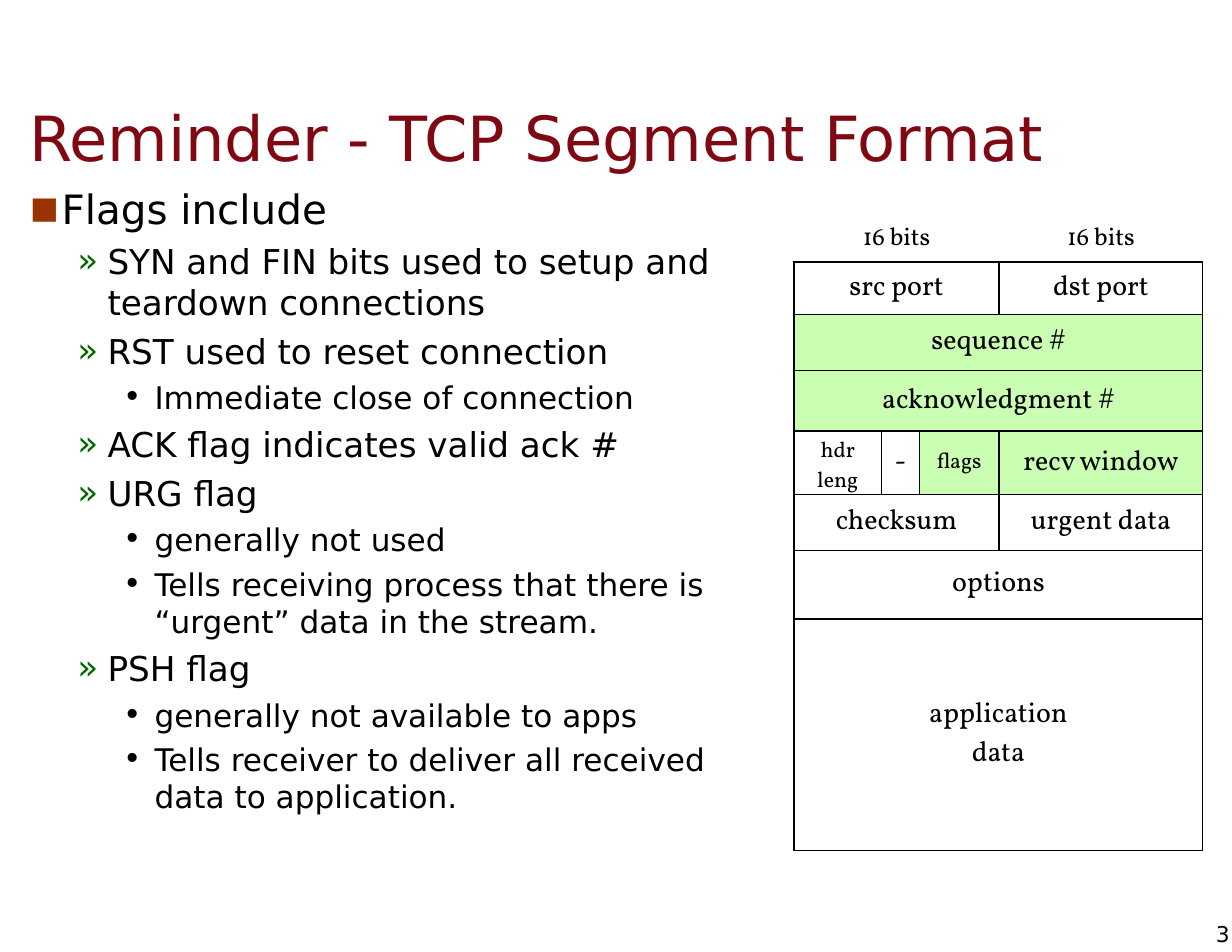
from dataclasses import dataclass
from lxml.etree import SubElement
from pptx import Presentation
from pptx.dml.color import RGBColor
from pptx.enum.text import MSO_ANCHOR, MSO_AUTO_SIZE, PP_ALIGN
from pptx.oxml.ns import qn
from pptx.slide import Slide
from pptx.util import Inches, Pt

BLACK = RGBColor(0x00, 0x00, 0x00)
WHITE = RGBColor(0xFF, 0xFF, 0xFF)
MAROON = RGBColor(0x7F, 0x08, 0x13)
RUST = RGBColor(0x99, 0x33, 0x00)
GREEN = RGBColor(0x00, 0x66, 0x00)
HIGHLIGHT = RGBColor(0xCA, 0xFE, 0xB2)

PLAIN_TABLE = "{2D5ABB26-0587-4C30-8999-92F81FD0307C}"
HEADER_SIDES = ("lnB",)
ALL_SIDES = ("lnL", "lnR", "lnT", "lnB")

LEVELS = (
    (26, 0.42, 0.28, "■", RUST, 75),
    (22, 0.83, 0.27, "»", GREEN, 100),
    (20, 1.25, 0.28, "•", BLACK, 100),
)

FLAG_NOTES = (
    (0, "Flags include"),
    (1, "SYN and FIN bits used to setup and \nteardown connections"),
    (1, "RST used to reset connection"),
    (2, "Immediate close of connection"),
    (1, "ACK flag indicates valid ack #"),
    (1, "URG flag"),
    (2, "generally not used"),
    (2, "Tells receiving process that there is “urgent” data in the stream."),
    (1, "PSH flag"),
    (2, "generally not available to apps"),
    (2, "Tells receiver to deliver all received data to application."),
)

FIELD_WIDTHS = (0.78, 0.34, 0.71, 1.82)
SEGMENT_ROWS = (
    (0.47, (("16 bits", 3, 16, None), ("16 bits", 1, 16, None))),
    (0.47, (("src port", 3, 18, WHITE), ("dst port", 1, 18, WHITE))),
    (0.5, (("sequence #", 4, 18, HIGHLIGHT),)),
    (0.54, (("acknowledgment #", 4, 18, HIGHLIGHT),)),
    (0.54, (("hdr leng", 1, 14, WHITE), ("-", 1, 18, WHITE),
            ("flags", 1, 14, HIGHLIGHT), ("recv window", 1, 18, HIGHLIGHT))),
    (0.5, (("checksum", 3, 18, WHITE), ("urgent data", 1, 18, WHITE))),
    (0.61, (("options", 4, 18, WHITE),)),
    (2.07, (("application\ndata", 4, 18, WHITE),)),
)


@dataclass
class SlideBuilder:
    slide: Slide
    text_font: str = "DejaVu Sans"
    table_font: str = "Vollkorn"

    def add_text(self, paragraph, text, size, color=BLACK, font=None):
        for index, line in enumerate(text.split("\n")):
            if index:
                paragraph.add_line_break()
            run = paragraph.add_run()
            run.text = line
            run.font.size = Pt(size)
            run.font.name = font or self.text_font
            run.font.color.rgb = color

    def inset(self, frame, horizontal, vertical):
        frame.margin_left = frame.margin_right = Inches(horizontal)
        frame.margin_top = frame.margin_bottom = Inches(vertical)

    def place(self, shape, left, top, width, height):
        shape.left, shape.top = Inches(left), Inches(top)
        shape.width, shape.height = Inches(width), Inches(height)

    def title(self, text, *box):
        title = self.slide.shapes.title
        self.place(title, *box)
        frame = title.text_frame
        self.inset(frame, 0.11, 0.06)
        frame.vertical_anchor = MSO_ANCHOR.MIDDLE
        frame.auto_size = MSO_AUTO_SIZE.NONE
        frame.paragraphs[0].alignment = PP_ALIGN.LEFT
        self.add_text(frame.paragraphs[0], text, 40, MAROON)

    def outline(self, items, *box):
        frame = self.slide.shapes.add_textbox(*map(Inches, box)).text_frame
        frame.word_wrap = True
        self.inset(frame, 0.11, 0.06)
        for index, (level, text) in enumerate(items):
            paragraph = frame.add_paragraph() if index else frame.paragraphs[0]
            size = LEVELS[level][0]
            self.bullet(paragraph, level)
            if index:
                paragraph.space_before = Pt(0.23 * size)
            self.add_text(paragraph, text, size)

    def bullet(self, paragraph, level):
        _, margin, hanging, char, color, percent = LEVELS[level]
        paragraph.level = level
        properties = paragraph._p.get_or_add_pPr()
        properties.set("marL", str(Inches(margin)))
        properties.set("indent", str(-Inches(hanging)))
        bullet_color = SubElement(properties, qn("a:buClr"))
        SubElement(bullet_color, qn("a:srgbClr"), val=str(color))
        SubElement(properties, qn("a:buSzPct"), val=str(percent * 1000))
        SubElement(properties, qn("a:buFont"), typeface=self.text_font)
        SubElement(properties, qn("a:buChar"), char=char)

    def table(self, widths, rows, left, top):
        heights = [height for height, _ in rows]
        table = self.slide.shapes.add_table(
            len(rows), len(widths), Inches(left), Inches(top),
            Inches(sum(widths)), Inches(sum(heights))).table
        table.first_row = table.horz_banding = False
        table._tbl.tblPr.find(qn("a:tableStyleId")).text = PLAIN_TABLE
        for column, width in zip(table.columns, widths):
            column.width = Inches(width)
        for row_index, (height, fields) in enumerate(rows):
            table.rows[row_index].height = Inches(height)
            start = 0
            for text, span, size, fill in fields:
                cell = table.cell(row_index, start)
                if span > 1:
                    cell.merge(table.cell(row_index, start + span - 1))
                self.field(cell, text, size, fill)
                start += span

    def field(self, cell, text, size, fill):
        cell.vertical_anchor = MSO_ANCHOR.MIDDLE if fill else MSO_ANCHOR.BOTTOM
        properties = cell._tc.get_or_add_tcPr()
        for side in ALL_SIDES if fill else HEADER_SIDES:
            border = SubElement(properties, qn(f"a:{side}"), w=str(Pt(1)))
            solid = SubElement(border, qn("a:solidFill"))
            SubElement(solid, qn("a:srgbClr"), val=str(BLACK))
        if fill:
            cell.fill.solid()
            cell.fill.fore_color.rgb = fill
        else:
            cell.fill.background()
        paragraph = cell.text_frame.paragraphs[0]
        paragraph.alignment = PP_ALIGN.CENTER
        self.add_text(paragraph, text, size, font=self.table_font)

    def page_number(self, text, *box):
        frame = self.slide.shapes.add_textbox(*map(Inches, box)).text_frame
        frame.word_wrap = True
        self.inset(frame, 0, 0)
        frame.vertical_anchor = MSO_ANCHOR.MIDDLE
        frame.paragraphs[0].alignment = PP_ALIGN.RIGHT
        self.add_text(frame.paragraphs[0], text, 14)


def main():
    presentation = Presentation()
    presentation.slide_width = Inches(11)
    presentation.slide_height = Inches(8.5)
    builder = SlideBuilder(
        presentation.slides.add_slide(presentation.slide_layouts[5]))
    builder.title("Reminder - TCP Segment Format", 0.15, 0.7, 10.53, 1.04)
    builder.outline(FLAG_NOTES, 0.02, 1.58, 6.89, 6.92)
    builder.table(FIELD_WIDTHS, SEGMENT_ROWS, 7.09, 1.87)
    builder.page_number("3", 10.64, 8.22, 0.34, 0.24)
    presentation.save("out.pptx")


if __name__ == "__main__":
    main()
